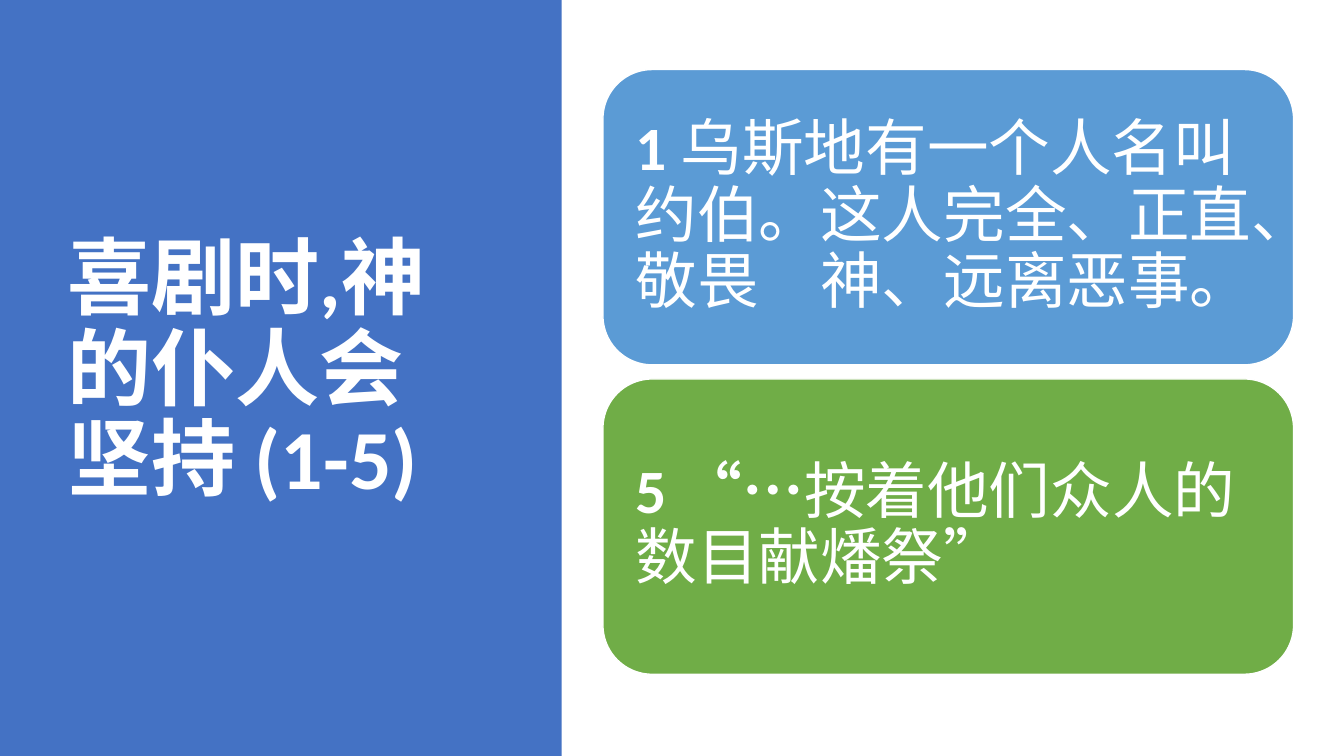
from pptx import Presentation
from pptx.dml.color import RGBColor
from pptx.enum.shapes import MSO_SHAPE
from pptx.enum.text import MSO_ANCHOR, MSO_AUTO_SIZE, PP_ALIGN
from pptx.util import Inches, Pt

RECT, ROUND = MSO_SHAPE.RECTANGLE, MSO_SHAPE.ROUNDED_RECTANGLE
MIDDLE, LEFT = MSO_ANCHOR.MIDDLE, PP_ALIGN.LEFT
NO_FIT = MSO_AUTO_SIZE.NONE

FONT = "Calibri"
COLORS = {"panel": "4472C4", "blue": "5B9BD5", "green": "70AD47", "white": "FFFFFF"}
TITLE = "喜剧时,神的仆人会坚持 (1-5)"
# Each verse: card colour, bold lead, regular text
VERSES = [
    ("blue", "1 ", "乌斯地有一个人名叫约伯。这人完全、正直、敬畏　神、远离恶事。"),
    ("green", "5 “…", "按着他们众人的数目献燔祭”"),
]


def color(name):
    return RGBColor.from_string(COLORS[name])


def add_box(slide, kind, box, fill):
    shape = slide.shapes.add_shape(kind, *map(Inches, box))
    shape.shadow.inherit = False
    shape.fill.solid()
    shape.fill.fore_color.rgb = color(fill)
    shape.line.fill.background()
    return shape


def write(frame, runs, size):
    """Fill a frame with (text, bold) runs."""
    frame.word_wrap = True
    frame.auto_size = NO_FIT
    frame.vertical_anchor = MIDDLE
    para = frame.paragraphs[0]
    para.alignment = LEFT
    para.line_spacing = 0.9
    for text, bold in runs:
        run = para.add_run()
        run.text = text
        run.font.name = FONT
        run.font.size = Pt(size)
        run.font.bold = bold
        run.font.color.rgb = color("white")


def add_panel(slide, box):
    """Coloured side panel with the slide title on it."""
    x, y, w, h = box
    panel = add_box(slide, RECT, box, "panel")
    title = slide.shapes.title
    title.left, title.top = Inches(x + 0.57), Inches(y + 0.68)
    title.width, title.height = Inches(w - 1.41), Inches(h - 1.48)
    write(title.text_frame, [(TITLE, True)], 60)
    # Put the panel behind the title
    title._element.addprevious(panel._element)


def add_cards(slide, box, gap):
    """Stack of equal verse cards."""
    x, y, w, h = box
    count = len(VERSES)
    tall = (h - gap * (count - 1)) / count
    for i, (fill, lead, text) in enumerate(VERSES):
        card = add_box(slide, ROUND, (x, y + i * (tall + gap), w, tall), fill)
        card.line.color.rgb = color("white")
        card.line.width = Pt(1)
        frame = card.text_frame
        frame.margin_left = frame.margin_right = Inches(0.18)
        frame.margin_top = frame.margin_bottom = Inches(0.18)
        write(frame, [(lead, True), (text, False)], 44)


def main():
    deck = Presentation()
    deck.slide_width, deck.slide_height = Inches(13.33), Inches(7.5)
    slide = deck.slides.add_slide(deck.slide_layouts[5])
    add_panel(slide, (0, 0, 5.57, 7.5))
    add_cards(slide, (5.98, 0.69, 6.85, 6), 0.14)
    deck.save("out.pptx")


if __name__ == "__main__":
    main()
